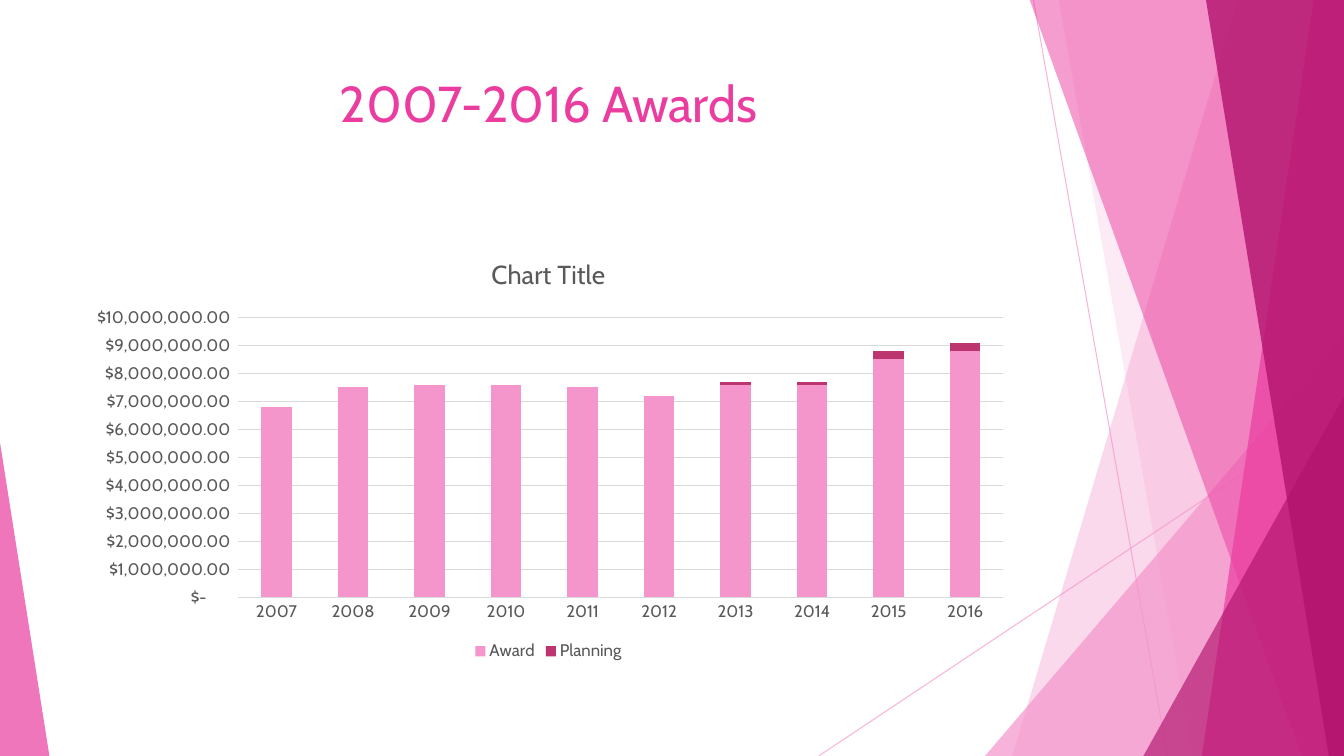
import pptx
import pptx.chart.data
import pptx.dml.color
import pptx.enum.chart
import pptx.enum.shapes
import pptx.enum.text
import pptx.oxml
import pptx.oxml.ns
import pptx.util
from dataclasses import dataclass

Inches = pptx.util.Inches
Pt = pptx.util.Pt
WIDTH, HEIGHT = 13.33, 7.5


@dataclass(frozen=True)
class Theme:
    font: str = "Cabin"
    light: str = "F496CB"
    pink: str = "EB3D9F"
    deep: str = "B2136D"
    planning: str = "BC356F"
    text: str = "595959"
    grid: str = "D9D9D9"
    title_size: float = 36
    chart_title_size: float = 18.6
    label_size: float = 12


def rgb(color):
    return pptx.dml.color.RGBColor.from_string(color)


def set_opacity(fill_owner, percent):
    """Add an alpha value to the solid colour inside an XML element."""
    color = fill_owner.find(".//" + pptx.oxml.ns.qn("a:srgbClr"))
    alpha = pptx.oxml.parse_xml(
        f'<a:alpha {pptx.oxml.ns.nsdecls("a")} val="{percent * 1000}"/>')
    color.append(alpha)


class SlideBuilder:
    def __init__(self, prs, theme):
        self.theme = theme
        self.s = prs.slides.add_slide(prs.slide_layouts[6])

    def style_font(self, font, size, color):
        font.name = self.theme.font
        font.size = Pt(size)
        font.color.rgb = rgb(color)

    def paint(self, sp, color, opacity):
        sp.shadow.inherit = False
        sp.fill.solid()
        sp.fill.fore_color.rgb = rgb(color)
        set_opacity(sp.fill._xPr, opacity)
        sp.line.fill.background()

    def hairline(self, x1, y1, x2, y2):
        line = self.s.shapes.add_connector(
            pptx.enum.shapes.MSO_CONNECTOR.STRAIGHT,
            Inches(x1), Inches(y1), Inches(x2), Inches(y2))
        line.line.width = Pt(0.75)
        line.line.color.rgb = rgb(self.theme.light)
        sp_pr = line._element.spPr
        set_opacity(sp_pr, 70)
        sp_pr.append(pptx.oxml.parse_xml(
            f'<a:effectLst {pptx.oxml.ns.nsdecls("a")}/>'))

    def panel(self, top_x, bottom_x, color, opacity):
        """Full-height band from a slanted left edge to the slide's right edge."""
        top = -0.01
        corners = [(WIDTH, top), (WIDTH, HEIGHT), (bottom_x, HEIGHT)]
        builder = self.s.shapes.build_freeform(Inches(top_x), Inches(top))
        builder.add_line_segments([(Inches(x), Inches(y)) for x, y in corners])
        self.paint(builder.convert_to_shape(), color, opacity)

    def triangle(self, left, width, height, apex, color, opacity):
        """Triangle standing on the slide's bottom edge."""
        sp = self.s.shapes.add_shape(
            pptx.enum.shapes.MSO_SHAPE.ISOSCELES_TRIANGLE,
            Inches(left), Inches(HEIGHT - height), Inches(width), Inches(height))
        sp.adjustments[0] = apex
        self.paint(sp, color, opacity)

    def title(self, text, left, top, width, height):
        box = self.s.shapes.add_textbox(
            Inches(left), Inches(top), Inches(width), Inches(height))
        tf = box.text_frame
        tf.word_wrap = True
        tf.vertical_anchor = pptx.enum.text.MSO_ANCHOR.TOP
        p = tf.paragraphs[0]
        p.alignment = pptx.enum.text.PP_ALIGN.CENTER
        r = p.add_run()
        r.text = text
        self.style_font(r.font, self.theme.title_size, self.theme.pink)

    def stacked_chart(self, title, years, series, left, top, width, height):
        """Draw stacked columns; series holds (name, values, colour) rows."""
        data = pptx.chart.data.CategoryChartData()
        data.categories = years
        for name, values, _ in series:
            data.add_series(name, values)
        chart = self.s.shapes.add_chart(
            pptx.enum.chart.XL_CHART_TYPE.COLUMN_STACKED,
            Inches(left), Inches(top), Inches(width), Inches(height), data).chart
        theme = self.theme
        self.style_font(chart.font, theme.label_size, theme.text)

        chart.has_title = True
        r = chart.chart_title.text_frame.paragraphs[0].add_run()
        r.text = title
        r.font.bold = False
        self.style_font(r.font, theme.chart_title_size, theme.text)

        plot = chart.plots[0]
        plot.gap_width, plot.overlap = 150, 100
        plot.vary_by_categories = False
        for bars, (_, _, color) in zip(plot.series, series):
            bars.invert_if_negative = False
            bars.format.fill.solid()
            bars.format.fill.fore_color.rgb = rgb(color)

        for axis in (chart.category_axis, chart.value_axis):
            axis.major_tick_mark = pptx.enum.chart.XL_TICK_MARK.NONE
            axis.minor_tick_mark = pptx.enum.chart.XL_TICK_MARK.NONE
            axis.format.line.fill.background()
            self.style_font(axis.tick_labels.font, theme.label_size, theme.text)
        axis = chart.value_axis
        axis.minimum_scale, axis.maximum_scale = 0, 10_000_000
        axis.major_unit = 1_000_000
        axis.tick_labels.number_format = (
            '_("$"* #,##0.00_);_("$"* \\(#,##0.00\\);_("$"* "-"??_);_(@_)')
        axis.tick_labels.number_format_is_linked = False
        axis.has_major_gridlines = True
        axis.major_gridlines.format.line.width = Pt(0.75)
        axis.major_gridlines.format.line.color.rgb = rgb(theme.grid)

        chart.has_legend = True
        chart.legend.position = pptx.enum.chart.XL_LEGEND_POSITION.BOTTOM
        chart.legend.include_in_layout = False
        self.style_font(chart.legend.font, theme.label_size, theme.text)


def main():
    prs = pptx.Presentation()
    prs.slide_width, prs.slide_height = Inches(WIDTH), Inches(HEIGHT)
    theme = Theme()
    slide = SlideBuilder(prs, theme)

    slide.hairline(10.25, 0, 11.58, HEIGHT)
    slide.hairline(WIDTH, 4.03, 8.12, HEIGHT)
    slide.panel(12.28, 10.04, theme.light, 36)
    slide.panel(10.5, 11.83, theme.light, 20)
    slide.triangle(9.77, 3.56, 4.17, 1, theme.light, 72)
    slide.panel(10.21, 12.91, theme.pink, 50)
    slide.panel(13.03, 11.92, theme.pink, 70)
    slide.panel(11.96, 13.18, theme.deep, 80)
    slide.triangle(11.34, 1.99, 3.57, 1, theme.deep, 66)
    slide.triangle(0, 0.49, 3.11, 0, theme.pink, 70)

    slide.title("2007-2016 Awards", 0.74, 0.67, 9.4, 1.44)
    awards = [6_800_000, 7_500_000, 7_600_000, 7_600_000, 7_500_000,
              7_200_000, 7_600_000, 7_600_000, 8_500_000, 8_800_000]
    planning = [None] * 6 + [100_000, 100_000, 300_000, 300_000]
    slide.stacked_chart(
        "Chart Title", [str(year) for year in range(2007, 2017)],
        [("Award", awards, theme.light), ("Planning", planning, theme.planning)],
        0.74, 2.36, 9.4, 4.24)
    prs.save("out.pptx")


if __name__ == "__main__":
    main()
